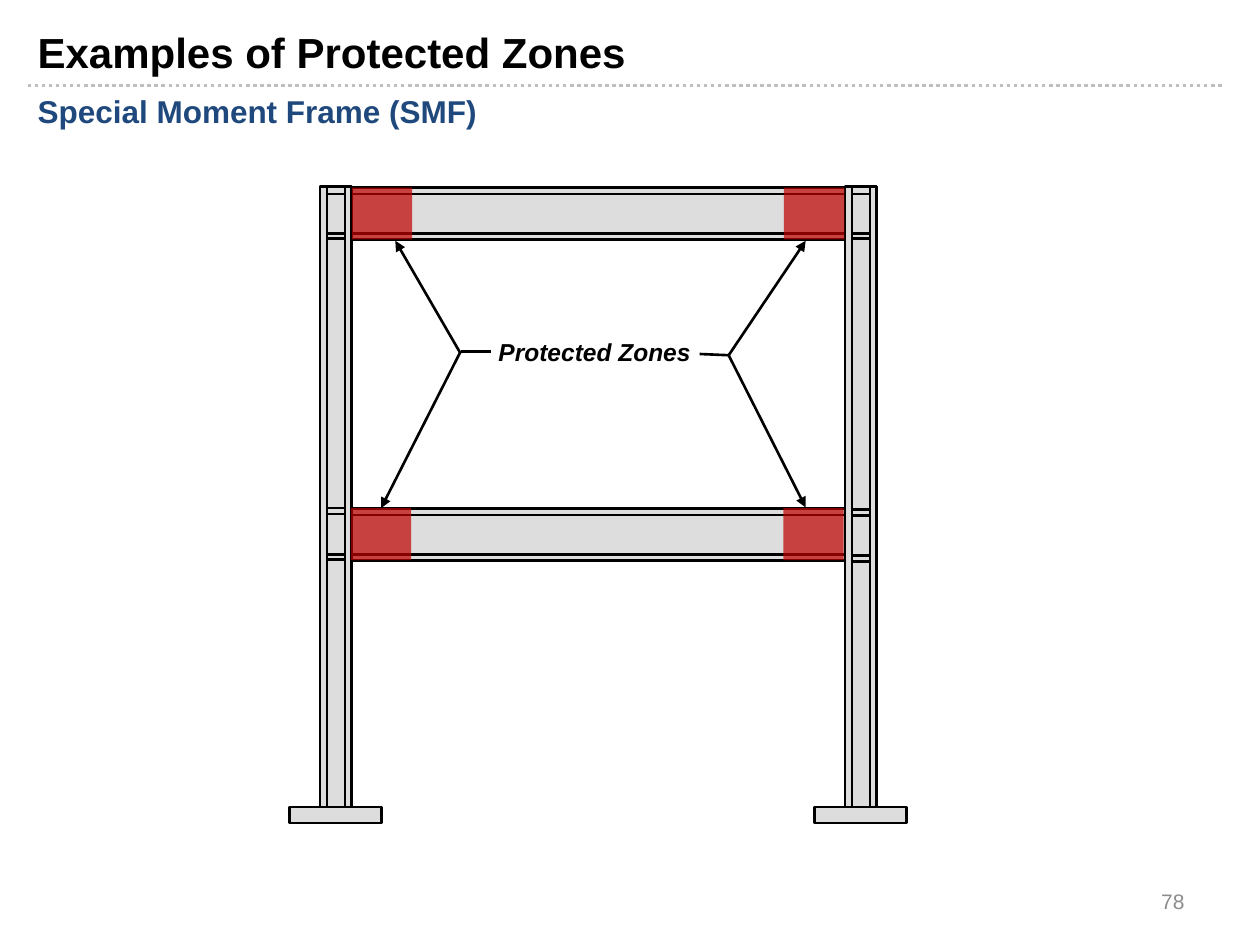
from dataclasses import dataclass

from lxml.etree import SubElement
from pptx import Presentation
from pptx.dml.color import RGBColor as RGB
from pptx.enum.dml import MSO_LINE
from pptx.enum.shapes import MSO_CONNECTOR as Link, MSO_SHAPE as Preset
from pptx.enum.text import MSO_ANCHOR as Anchor, PP_ALIGN as Align
from pptx.oxml.ns import qn
from pptx.util import Pt


@dataclass(frozen=True)
class Theme:
    font: str = "Arial"
    ink: str = "000000"
    accent: str = "1F497D"
    muted: str = "8C8C8C"
    rule: str = "BFBFBF"
    steel: str = "DDDDDD"
    zone: str = "C00000"
    zone_opacity: int = 70
    title_size: int = 24
    subtitle_size: int = 18
    label_size: int = 14
    number_size: int = 12
    stroke: float = 1.5
    rule_stroke: float = 2


T = Theme()

# Content: wording, box, size, colour, bold, italic, alignment, anchor
TEXTS = [
    ("Examples of Protected Zones", (14.4, 11.5, 646.6, 31.7),
     T.title_size, T.ink, True, False, Align.LEFT, Anchor.TOP),
    ("Special Moment Frame (SMF)", (14.4, 49, 646.6, 35.3),
     T.subtitle_size, T.accent, True, False, Align.LEFT, Anchor.TOP),
    ("Protected Zones", (248.4, 188.9, 182.9, 24),
     T.label_size, T.ink, True, True, Align.CENTER, Anchor.TOP),
    ("78", (516.2, 500.4, 167.8, 28.8),
     T.number_size, T.muted, False, False, Align.RIGHT, Anchor.MIDDLE),
]

# Frame geometry
COLUMN_LEFTS = (182.9, 482.9)
COLUMN_TOP, COLUMN_W, COLUMN_H = 106.6, 18, 359.3
WEB_EDGES = (4, 14.2)
BEAM_TOPS = (107.2, 290.7)
BEAM_H = 29.7
BEAM_FLANGES = (3.6, 26.1)
STIFFENERS = [  # column index, level, offsets below it
    (0, 107.2, (3.6, 26.1, 29)),
    (1, 107.2, (3.6, 26.1, 29)),
    (0, 290.4, (0, 3.3, 26.4, 29.5)),
    (1, 291.2, (0, 3.3, 26.4, 29.5)),
]
FOOTING_TOP, FOOTING_W, FOOTING_H = 461.2, 52.6, 9.2
ZONES = [(201, 107.2), (200.5, 290.4), (448, 107.2), (447.6, 290.4)]
ZONE_W, ZONE_H = 34.5, 29.7

# Leaders: start, end, has arrowhead, index of the zone joined at its top
LEADERS = [
    ((399.8, 202.3), (416.4, 203), False, None),
    ((416.4, 203), (460.4, 137.6), True, None),
    ((416.4, 203), (460.4, 290), True, None),
    ((280.6, 200.9), (263.2, 200.9), False, None),
    ((263.2, 202), (225.9, 137.6), True, None),
    ((263.2, 200.9), (217, 290.4), True, 1),
]


def draw_line(parent, start, end, color=T.ink, width=T.stroke, arrow=False):
    line = parent.add_connector(Link.STRAIGHT, *map(Pt, start + end))
    line.line.color.rgb = RGB.from_string(color)
    line.line.width = Pt(width)
    if arrow:
        SubElement(line.line._get_or_add_ln(), qn("a:tailEnd"), type="triangle")
    SubElement(line._element.spPr, qn("a:effectLst"))
    return line


def draw_box(parent, box, fill=T.steel, outlined=True, opacity=None):
    shape = parent.add_shape(Preset.RECTANGLE, *map(Pt, box))
    shape.shadow.inherit = False
    shape.fill.solid()
    shape.fill.fore_color.rgb = RGB.from_string(fill)
    if opacity:
        color = shape._element.spPr.find(qn("a:solidFill"))[0]
        SubElement(color, qn("a:alpha"), val=str(opacity * 1000))
    if outlined:
        shape.line.color.rgb = RGB.from_string(T.ink)
        shape.line.width = Pt(T.stroke)
    else:
        shape.line.fill.background()
    return shape


def draw_text(parent, words, box, size, color, bold, italic, align, anchor):
    frame = parent.add_textbox(*map(Pt, box)).text_frame
    frame.word_wrap = True
    frame.vertical_anchor = anchor
    paragraph = frame.paragraphs[0]
    paragraph.alignment = align
    run = paragraph.add_run()
    run.text = words
    font = run.font
    font.name, font.size, font.bold, font.italic = T.font, Pt(size), bold, italic
    font.color.rgb = RGB.from_string(color)


def draw_frame(parent):
    # Columns with their web edges
    for left in COLUMN_LEFTS:
        draw_box(parent, (left, COLUMN_TOP, COLUMN_W, COLUMN_H))
        for edge in WEB_EDGES:
            draw_line(parent, (left + edge, COLUMN_TOP),
                      (left + edge, COLUMN_TOP + COLUMN_H))
    # Beams span between the inner column faces
    start, end = COLUMN_LEFTS[0] + COLUMN_W, COLUMN_LEFTS[1]
    for top in BEAM_TOPS:
        draw_box(parent, (start, top, end - start, BEAM_H))
        for flange in BEAM_FLANGES:
            draw_line(parent, (start, top + flange), (end, top + flange))


def main():
    deck = Presentation()
    deck.slide_width, deck.slide_height = Pt(720), Pt(540)
    shapes = deck.slides.add_slide(deck.slide_layouts[6]).shapes

    # Heading rule
    rule = draw_line(shapes, (15.8, 49), (699.8, 49), T.rule, T.rule_stroke)
    rule.line.dash_style = MSO_LINE.ROUND_DOT

    draw_frame(shapes.add_group_shape().shapes)

    # Protected zones and their leaders
    zones = [draw_box(shapes, (*corner, ZONE_W, ZONE_H), T.zone, False,
                      T.zone_opacity) for corner in ZONES]
    for start, end, arrow, target in LEADERS:
        leader = draw_line(shapes, start, end, arrow=arrow)
        if target is not None:
            leader.end_connect(zones[target], 0)

    # Stiffeners inside the columns
    for column, level, offsets in STIFFENERS:
        joint = shapes.add_group_shape().shapes
        near, far = (COLUMN_LEFTS[column] + edge for edge in WEB_EDGES)
        for offset in offsets:
            draw_line(joint, (near, level + offset), (far, level + offset))

    # Footings centred under the columns
    for left in COLUMN_LEFTS:
        draw_box(shapes, (left + (COLUMN_W - FOOTING_W) / 2, FOOTING_TOP,
                          FOOTING_W, FOOTING_H))

    for text in TEXTS:
        draw_text(shapes, *text)
    deck.save("out.pptx")


if __name__ == "__main__":
    main()
